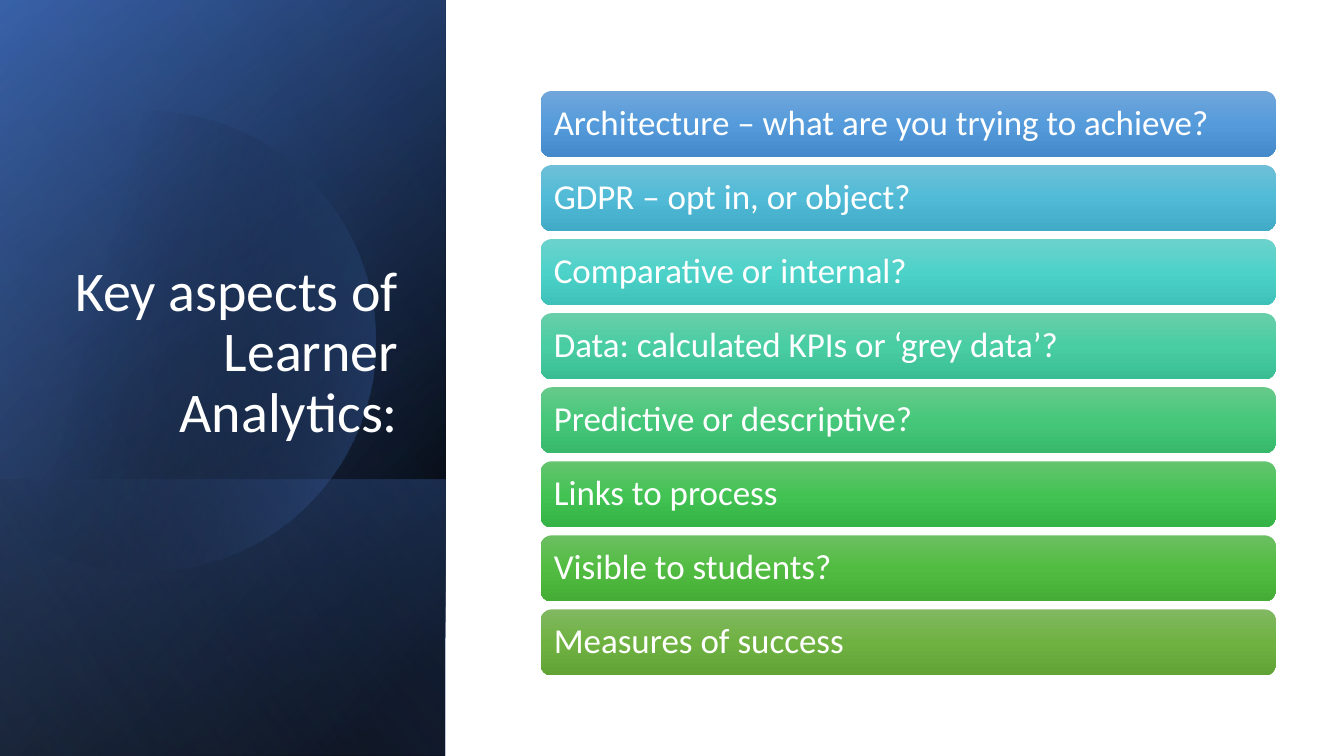
import math

from lxml import etree
from pptx import Presentation
from pptx.dml.color import RGBColor
from pptx.enum import shapes, text
from pptx.oxml import ns
from pptx.util import Pt

HEX = {"white": "FFFFFF", "black": "000000", "navy": "2F5597",
       "blue": "4472C4", "pale": "8FAADC"}

# Text of each bar, with its top, middle and bottom colours
BARS = [
    ("Architecture – what are you trying to achieve?", "71A6DB", "559BDB", "448ACA"),
    ("GDPR – opt in, or object?", "6EBFD7", "51BBD7", "41AAC6"),
    ("Comparative or internal?", "6BD2CC", "4DD2CA", "3DC1B9"),
    ("Data: calculated KPIs or ‘grey data’?", "68CEAA", "49CDA2", "3ABD92"),
    ("Predictive or descriptive?", "66C98A", "46C87A", "37B86B"),
    ("Links to process", "64C46F", "43C354", "35B346"),
    ("Visible to students?", "6CBF62", "51BC41", "45AC35"),
    ("Measures of success", "81B861", "6FB242", "62A336"),
]

# Side panel: top, height, gradient angle, stops of (place, colour, opacity)
SIDE = 318.24
BASE = [
    (0, 540, 50, [(8, "black", 100), (100, "navy", 100)]),
    (0, 540, 30, [(0, "black", 0), (99, "blue", 46)]),
    (342.72, 197.28, 130, [(2, "blue", 29), (100, "black", 30)]),
]
GLOW = [(29, "black", 0), (100, "blue", 43)]
SHEEN = (0, 540, 120, [(0, "black", 0), (99, "pale", 11)])


def shade(shape, angle, stops):
    """Fill with a linear gradient, without line or shadow."""
    shape.shadow.inherit = False
    shape.line.fill.background()
    shape.fill.background()
    props = shape._element.spPr
    grad = etree.Element(ns.qn("a:gradFill"), rotWithShape="1")
    group = etree.SubElement(grad, ns.qn("a:gsLst"))
    for place, color, alpha in stops:
        stop = etree.SubElement(group, ns.qn("a:gs"), pos=str(place * 1000))
        tone = etree.SubElement(stop, ns.qn("a:srgbClr"), val=HEX.get(color, color))
        if alpha < 100:
            etree.SubElement(tone, ns.qn("a:alpha"), val=str(alpha * 1000))
    etree.SubElement(grad, ns.qn("a:lin"), ang=str(round(angle * 60000)), scaled="0")
    props.replace(props.find(ns.qn("a:noFill")), grad)


def panel(slide, top, height, angle, stops):
    """Turned and mirrored rectangle that covers part of the side."""
    left = (SIDE - height) / 2
    rect = slide.shapes.add_shape(
        shapes.MSO_SHAPE.RECTANGLE, Pt(left), Pt(top - left), Pt(height), Pt(SIDE))
    rect.rotation = 90
    rect._element.spPr.find(ns.qn("a:xfrm")).set("flipH", "1")
    shade(rect, angle, stops)


def disc(slide, x, y, radius, angle, stops):
    """Circle cut off at the left edge of the slide."""
    half = math.acos(-x / radius)
    turns = [half * (i / 60 - 1) for i in range(121)]
    dots = [(Pt(max(0, x + radius * math.cos(t))), Pt(y + radius * math.sin(t)))
            for t in turns]
    pen = slide.shapes.build_freeform(*dots[0])
    pen.add_line_segments(dots[1:], close=True)
    shade(pen.convert_to_shape(), angle, stops)


def write(shape, words, size, align, anchor):
    frame = shape.text_frame
    frame.text = words
    para = frame.paragraphs[0]
    inset = Pt(7.2)
    formats = [
        (frame, {"word_wrap": True, "auto_size": text.MSO_AUTO_SIZE.NONE,
                 "vertical_anchor": anchor, "margin_left": inset,
                 "margin_right": inset, "margin_top": Pt(3.6),
                 "margin_bottom": Pt(3.6)}),
        (para, {"alignment": align, "line_spacing": 0.9}),
        (para.runs[0].font, {"name": "Calibri", "size": Pt(size)}),
    ]
    for target, values in formats:
        for name, value in values.items():
            setattr(target, name, value)
    para.runs[0].font.color.rgb = RGBColor.from_string(HEX["white"])


def head(slide, words):
    title = slide.shapes.title
    box = {"left": 46.08, "top": 132.48, "width": 245.52, "height": 188.64}
    for name, value in box.items():
        setattr(title, name, Pt(value))
    write(title, words, 40, text.PP_ALIGN.RIGHT, text.MSO_ANCHOR.BOTTOM)
    # Bring the title in front of the panels
    slide.shapes._spTree.append(title._element)


def bar(slide, row, words, *colors):
    rect = slide.shapes.add_shape(
        shapes.MSO_SHAPE.ROUNDED_RECTANGLE,
        Pt(386.2), Pt(65 + row * 52.9), Pt(525), Pt(47.2))
    shade(rect, 90, [(i * 50, c, 100) for i, c in enumerate(colors)])
    write(rect, words, 25, text.PP_ALIGN.LEFT, text.MSO_ANCHOR.MIDDLE)


def main():
    deck = Presentation()
    deck.slide_width, deck.slide_height = Pt(960), Pt(540)
    slide = deck.slides.add_slide(deck.slide_layouts[5])

    # Side panel
    for part in BASE:
        panel(slide, *part)
    disc(slide, 103.7, 243.6, 164.8, 13.9, GLOW)
    panel(slide, *SHEEN)
    head(slide, "Key aspects of Learner Analytics:")

    # List of aspects
    for row, item in enumerate(BARS):
        bar(slide, row, *item)

    deck.save("out.pptx")


if __name__ == "__main__":
    main()
